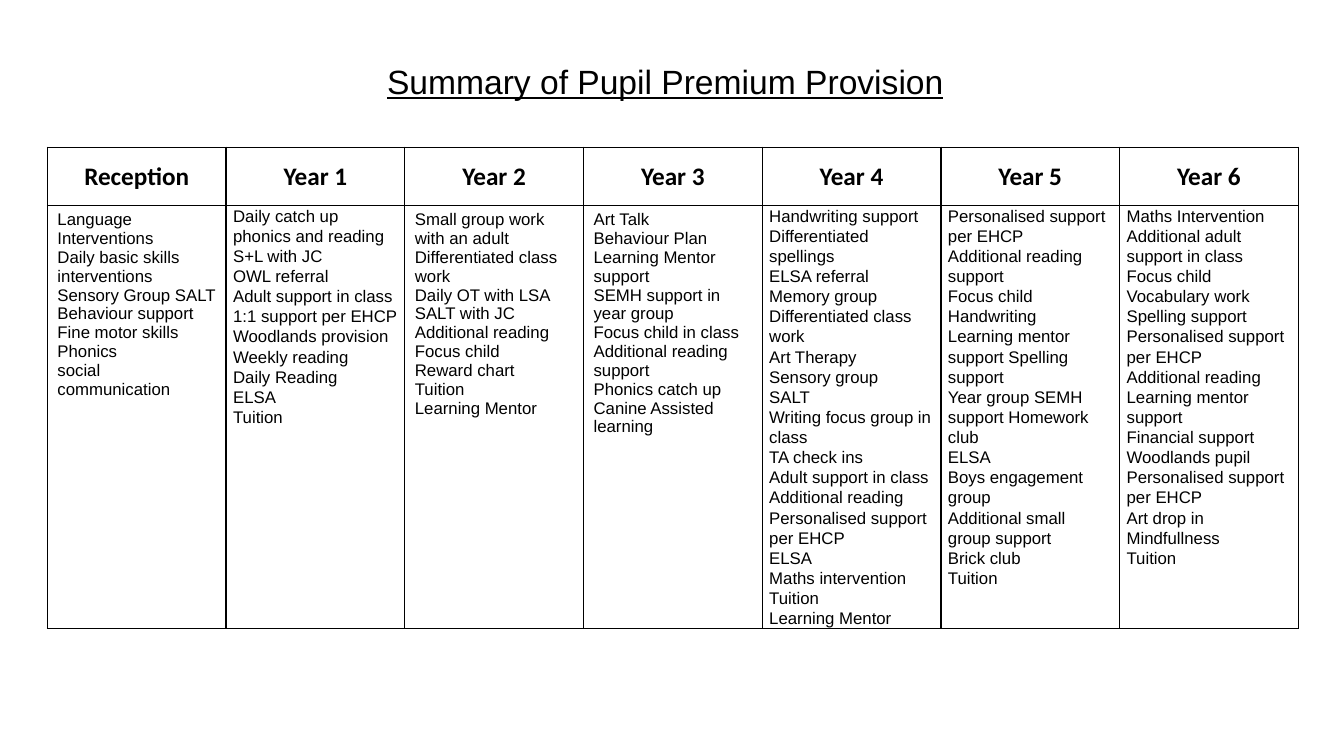
from lxml.etree import SubElement
from pptx import Presentation
from pptx.dml.color import RGBColor
from pptx.enum.text import MSO_ANCHOR as Anchor, PP_ALIGN as Align
from pptx.oxml.ns import qn
from pptx.util import Inches, Pt

BLACK, WHITE = "000000", "FFFFFF"
TITLE_FORMAT = {"name": "Arial", "size": Pt(24), "underline": True, "bold": False}
HEADER_FORMAT = {"name": "Calibri", "size": Pt(18), "bold": True}
BODY_FORMAT = {"name": "Arial", "size": Pt(12), "bold": False}
TIGHT_MARGINS = {
    "margin_left": Inches(0.07), "margin_right": Inches(0.07),
    "margin_top": 0, "margin_bottom": 0,
}
TIGHT_YEARS = ("Year 1", "Year 4", "Year 5", "Year 6")
COLUMN_WIDTH, HEADER_HEIGHT, BODY_HEIGHT = 1.773, 0.58, 4.18

PROVISION = {
    "Reception": [
        "Language Interventions",
        "Daily basic skills interventions Sensory Group SALT",
        "Behaviour support",
        "Fine motor skills",
        "Phonics",
        "social communication",
    ],
    "Year 1": [
        "Daily catch up phonics and reading",
        "S+L with JC",
        "OWL referral",
        "Adult support in class",
        "1:1 support per EHCP Woodlands provision",
        "Weekly reading",
        "Daily Reading",
        "ELSA",
        "Tuition",
    ],
    "Year 2": [
        "Small group work with an adult",
        "Differentiated class work",
        "Daily OT with LSA",
        "SALT with JC",
        "Additional reading",
        "Focus child",
        "Reward chart",
        "Tuition",
        "Learning Mentor",
    ],
    "Year 3": [
        "Art Talk",
        "Behaviour Plan",
        "Learning Mentor support",
        "SEMH support in year group",
        "Focus child in class Additional reading support",
        "Phonics catch up Canine Assisted learning",
    ],
    "Year 4": [
        "Handwriting support Differentiated spellings",
        "ELSA referral",
        "Memory group Differentiated class work",
        "Art Therapy",
        "Sensory group",
        "SALT",
        "Writing focus group in class",
        "TA check ins",
        "Adult support in class Additional reading",
        "Personalised support per EHCP",
        "ELSA",
        "Maths intervention",
        "Tuition",
        "Learning Mentor",
    ],
    "Year 5": [
        "Personalised support per EHCP",
        "Additional reading support",
        "Focus child",
        "Handwriting",
        "Learning mentor support Spelling support",
        "Year group SEMH support Homework club",
        "ELSA",
        "Boys engagement group",
        "Additional small group support",
        "Brick club",
        "Tuition",
    ],
    "Year 6": [
        "Maths Intervention Additional adult support in class",
        "Focus child",
        "Vocabulary work",
        "Spelling support Personalised support per EHCP",
        "Additional reading Learning mentor support",
        "Financial support",
        "Woodlands pupil",
        "Personalised support per EHCP",
        "Art drop in",
        "Mindfullness",
        "Tuition",
    ],
}


def paint(color_format, color):
    color_format.rgb = RGBColor.from_string(color)


def write(text_frame, lines, font_format, **paragraph_format):
    text_frame.text = "\n".join(lines)
    for paragraph in text_frame.paragraphs:
        for name, value in paragraph_format.items():
            setattr(paragraph, name, value)
        for run in paragraph.runs:
            for name, value in font_format.items():
                setattr(run.font, name, value)
            paint(run.font.color, BLACK)


presentation = Presentation()
presentation.slide_width, presentation.slide_height = Inches(13.333), Inches(7.5)
slide = presentation.slides.add_slide(presentation.slide_layouts[5])

title = slide.shapes.title
title.left, title.top = Inches(1.78), Inches(0.55)
title.width, title.height = Inches(9.64), Inches(0.5)
write(title.text_frame, ["Summary of Pupil Premium Provision"], TITLE_FORMAT,
      alignment=Align.CENTER)

table = slide.shapes.add_table(
    2, len(PROVISION), Inches(0.47), Inches(1.46),
    Inches(COLUMN_WIDTH * len(PROVISION)), Inches(HEADER_HEIGHT + BODY_HEIGHT),
).table
table.horz_banding = False
table.rows[0].height = Inches(HEADER_HEIGHT)
table.rows[1].height = Inches(BODY_HEIGHT)

for index, (year, activities) in enumerate(PROVISION.items()):
    table.columns[index].width = Inches(COLUMN_WIDTH)
    header, body = table.cell(0, index), table.cell(1, index)
    header.vertical_anchor = Anchor.MIDDLE
    write(header.text_frame, [year], HEADER_FORMAT, alignment=Align.CENTER)
    is_tight = year in TIGHT_YEARS
    write(body.text_frame, activities, BODY_FORMAT,
          line_spacing=1.07 if is_tight else 1.0)
    if is_tight:
        for name, value in TIGHT_MARGINS.items():
            setattr(body, name, value)

for cell in table.iter_cells():
    properties = cell._tc.get_or_add_tcPr()
    for side in ("a:lnL", "a:lnR", "a:lnT", "a:lnB"):
        border = SubElement(properties, qn(side), w=str(Pt(1)))
        border_fill = SubElement(border, qn("a:solidFill"))
        SubElement(border_fill, qn("a:srgbClr"), val=BLACK)
    cell.fill.solid()
    paint(cell.fill.fore_color, WHITE)

presentation.save("out.pptx")
